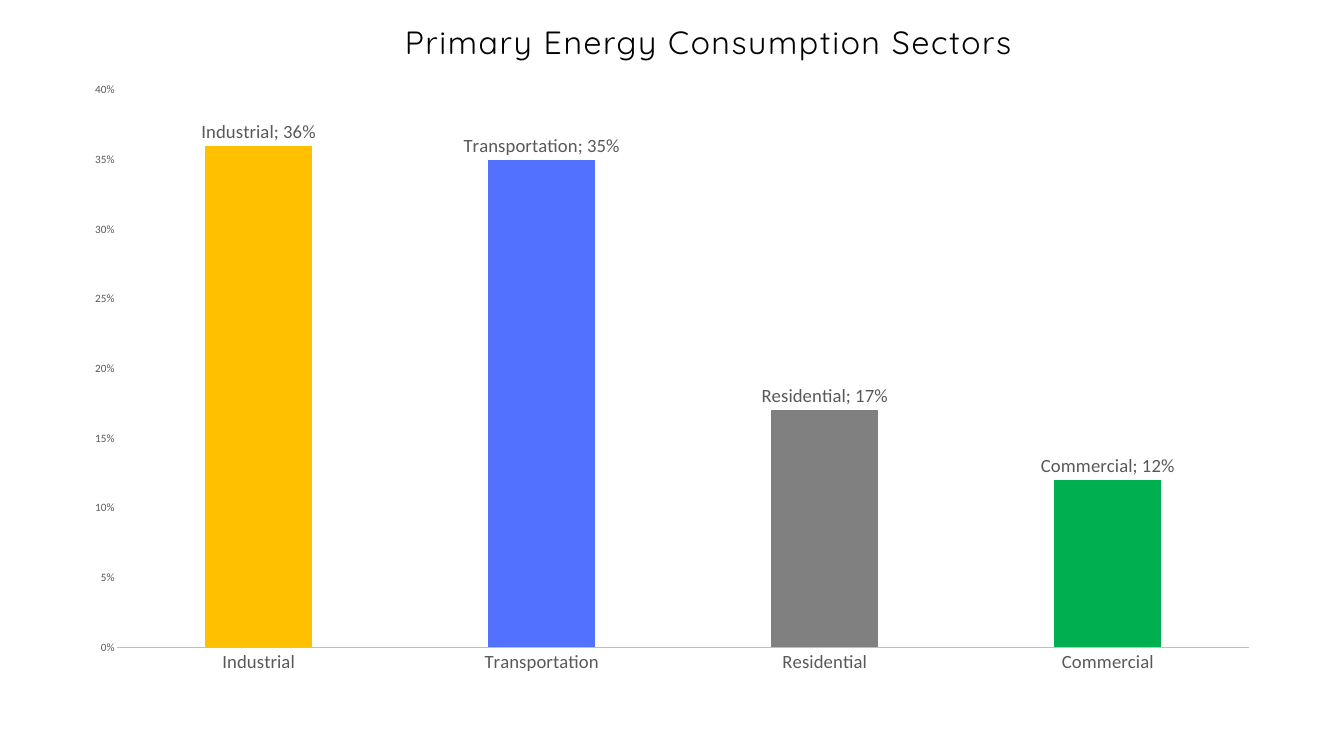
"""Build a slide with a column chart of primary energy consumption by sector."""
from lxml import etree
from pptx import Presentation
from pptx.chart.data import CategoryChartData
from pptx.dml.color import RGBColor
from pptx.enum.chart import XL_CHART_TYPE, XL_LABEL_POSITION, XL_TICK_MARK
from pptx.enum.text import PP_ALIGN
from pptx.oxml.ns import qn
from pptx.util import Cm, Pt

COLUMNS = XL_CHART_TYPE.COLUMN_CLUSTERED
ABOVE_BAR = XL_LABEL_POSITION.OUTSIDE_END
NO_TICK = XL_TICK_MARK.NONE
CENTER = PP_ALIGN.CENTER

HEADING = "Primary Energy Consumption Sectors"
SECTORS = [
    ("Industrial", 0.36, "FFC000"),
    ("Transportation", 0.35, "5271FF"),
    ("Residential", 0.17, "808080"),
    ("Commercial", 0.12, "00B050"),
]
GREY = "595959"


def rgb(color):
    return RGBColor.from_string(color)


def style(font, name, size, color):
    font.name = name
    font.size = Pt(size)
    font.color.rgb = rgb(color)


def add_heading(slide):
    heading = slide.shapes.add_textbox(Cm(11), Cm(0.53), Cm(31.55), Cm(1.65))
    frame = heading.text_frame
    frame.word_wrap = True
    frame.margin_left = frame.margin_right = 0
    frame.margin_top = frame.margin_bottom = 0
    frame.text = HEADING
    line = frame.paragraphs[0]
    line.alignment = CENTER
    line.line_spacing = Pt(49.8)
    words = line.runs[0]
    style(words.font, "Quicksand", 34.4, "000000")
    words.font.bold = False
    words.font._element.set("spc", "170")


def add_sector_chart(slide):
    shares = CategoryChartData(number_format="0%")
    shares.categories = [sector for sector, _, _ in SECTORS]
    shares.add_series("Series 1", [share for _, share, _ in SECTORS])
    chart = slide.shapes.add_chart(
        COLUMNS, Cm(2.69), Cm(2.69), Cm(45.44), Cm(23.22), shares
    ).chart
    chart.has_title = False
    chart.has_legend = False
    style(chart.font, "Calibri", 10, "000000")

    sector_axis, share_axis = chart.category_axis, chart.value_axis
    for axis, size in ((sector_axis, 20), (share_axis, 12)):
        axis.major_tick_mark = axis.minor_tick_mark = NO_TICK
        axis.has_major_gridlines = False
        style(axis.tick_labels.font, "Calibri", size, GREY)
    sector_axis.format.line.color.rgb = rgb("BFBFBF")
    sector_axis.format.line.width = Pt(1.5)
    share_axis.format.line.fill.background()
    share_axis.minimum_scale = 0
    share_axis.maximum_scale = 0.4
    share_axis.major_unit = 0.05
    share_axis.tick_labels.number_format = "0%"
    share_axis.tick_labels.number_format_is_linked = False

    plot = chart.plots[0]
    plot.gap_width = 164
    plot.overlap = -22
    plot.vary_by_categories = False
    bars = plot.series[0]
    for index, (_, _, color) in enumerate(SECTORS):
        fill = bars.points[index].format.fill
        fill.solid()
        fill.fore_color.rgb = rgb(color)

    labels = bars.data_labels
    labels.show_value = True
    labels.show_category_name = True
    labels.number_format = "0%"
    labels.number_format_is_linked = False
    labels.position = ABOVE_BAR
    style(labels.font, "Calibri", 20, GREY)
    separator = etree.Element(qn("c:separator"))
    separator.text = "; "
    labels._element.find(qn("c:showBubbleSize")).addnext(separator)


def main():
    deck = Presentation()
    deck.slide_width = Cm(50.8)
    deck.slide_height = Cm(28.58)
    slide = deck.slides.add_slide(deck.slide_layouts[6])
    add_sector_chart(slide)
    add_heading(slide)
    deck.save("out.pptx")


if __name__ == "__main__":
    main()
